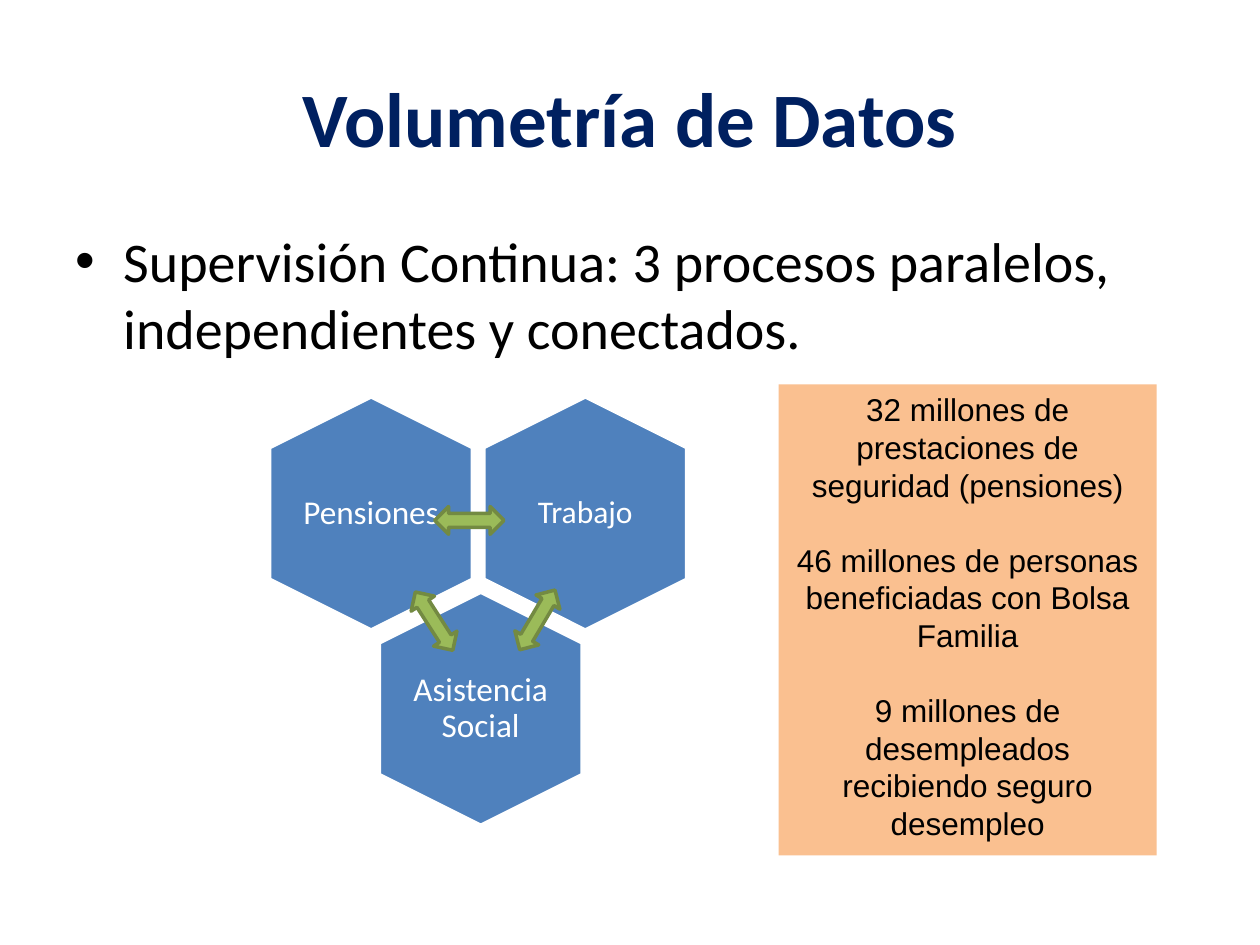
from lxml import etree
from pptx import Presentation
from pptx.dml.color import RGBColor
from pptx.enum.shapes import MSO_SHAPE
from pptx.enum.text import MSO_ANCHOR, PP_ALIGN
from pptx.oxml.ns import qn
from pptx.util import Inches, Pt

HEX, ARROW, RECT = MSO_SHAPE.HEXAGON, MSO_SHAPE.LEFT_RIGHT_ARROW, MSO_SHAPE.RECTANGLE
TOP, MIDDLE = MSO_ANCHOR.TOP, MSO_ANCHOR.MIDDLE
LEFT, CENTER = PP_ALIGN.LEFT, PP_ALIGN.CENTER

# Content
TITLE = "Volumetría de Datos"
POINT = "Supervisión Continua: 3 procesos paralelos, independientes y conectados."
CELLS = [  # label, left, top, type size
    ("Trabajo", 3.72, 3.27, 18),
    ("Pensiones", 2.02, 3.27, 19),
    ("Asistencia Social", 2.89, 4.82, 19),
]
LINKS = [(3.99, 4.81, 300.6), (3.17, 4.82, 57.3), (3.45, 4.02, 0)]  # left, top, turn
FACTS = [
    "32 millones de prestaciones de seguridad (pensiones)",
    "46 millones de personas beneficiadas con Bolsa Familia",
    "9 millones de desempleados recibiendo seguro desempleo",
]

THEME = {
    "head": "Calibri", "note": "Arial",
    "navy": "002060", "black": "000000", "white": "FFFFFF",
    "blue": "4F81BD", "green": "9BBB59", "olive": "738A42", "peach": "FAC090",
    "title": 44, "body": 32, "fact": 18, "gap": 21, "edge": 2,
}
HEX_W, HEX_H = 1.85, 1.61
LABEL_W, LABEL_H = 1.11, 1.27


def color(name):
    return RGBColor.from_string(THEME[name])


def write(shape, lines, font="head", size=18, ink="black", bold=False, align=CENTER,
          anchor=MIDDLE, inset=(0.1, 0.05), gap=0, pitch=None, bullet=None):
    frame = shape.text_frame
    frame.word_wrap = True
    frame.vertical_anchor = anchor
    frame.margin_left = frame.margin_right = Inches(inset[0])
    frame.margin_top = frame.margin_bottom = Inches(inset[1])
    for i, line in enumerate(lines):
        para = frame.add_paragraph() if i else frame.paragraphs[0]
        para.alignment = align
        if i:
            para.space_before = Pt(gap)
        if pitch:
            para.line_spacing = pitch
        if bullet:
            props = para._p.get_or_add_pPr()
            props.set("marL", str(Inches(0.38)))
            props.set("indent", str(-Inches(0.38)))
            etree.SubElement(props, qn("a:buFont")).set("typeface", THEME["note"])
            etree.SubElement(props, qn("a:buChar")).set("char", bullet)
        run = para.add_run()
        run.text = line
        run.font.name, run.font.size, run.font.bold = THEME[font], Pt(size), bold
        run.font.color.rgb = color(ink)


def draw(kind, left, top, width, height, fill, line=None, turn=0):
    shape = slide.shapes.add_shape(kind, *map(Inches, (left, top, width, height)))
    shape.shadow.inherit = False
    shape.rotation = turn
    shape.fill.solid()
    shape.fill.fore_color.rgb = color(fill)
    if line:
        shape.line.color.rgb = color(line)
        shape.line.width = Pt(THEME["edge"])
    else:
        shape.line.fill.background()
    return shape


def box(left, top, width, height):
    return slide.shapes.add_textbox(*map(Inches, (left, top, width, height)))


deck = Presentation()
deck.slide_width, deck.slide_height = Inches(10), Inches(7.5)
slide = deck.slides.add_slide(deck.slide_layouts[6])

# Title and bullet
write(box(0.5, 0.3, 9, 1.25), [TITLE], size=THEME["title"], ink="navy", bold=True)
write(box(0.5, 1.75, 9, 4.95), [POINT], size=THEME["body"], align=LEFT, anchor=TOP, bullet="•")

# Hexagons, each with a centred label
for label, left, top, size in CELLS:
    cell = draw(HEX, left, top, HEX_W, HEX_H, "blue", "white", 90)
    cell.adjustments[0], cell.adjustments[1] = 0.25, 1.155
    place = box(left + (HEX_W - LABEL_W) / 2, top + (HEX_H - LABEL_H) / 2, LABEL_W, LABEL_H)
    write(place, [label], size=size, ink="white", inset=(0, 0), pitch=0.9)

# Arrows between hexagons
for left, top, turn in LINKS:
    draw(ARROW, left, top, 0.55, 0.22, "green", "olive", turn)

# Facts panel
panel = draw(RECT, 6.18, 3.05, 3, 3.74, "peach")
write(panel, FACTS, font="note", size=THEME["fact"], anchor=TOP, gap=THEME["gap"])

deck.save("out.pptx")
